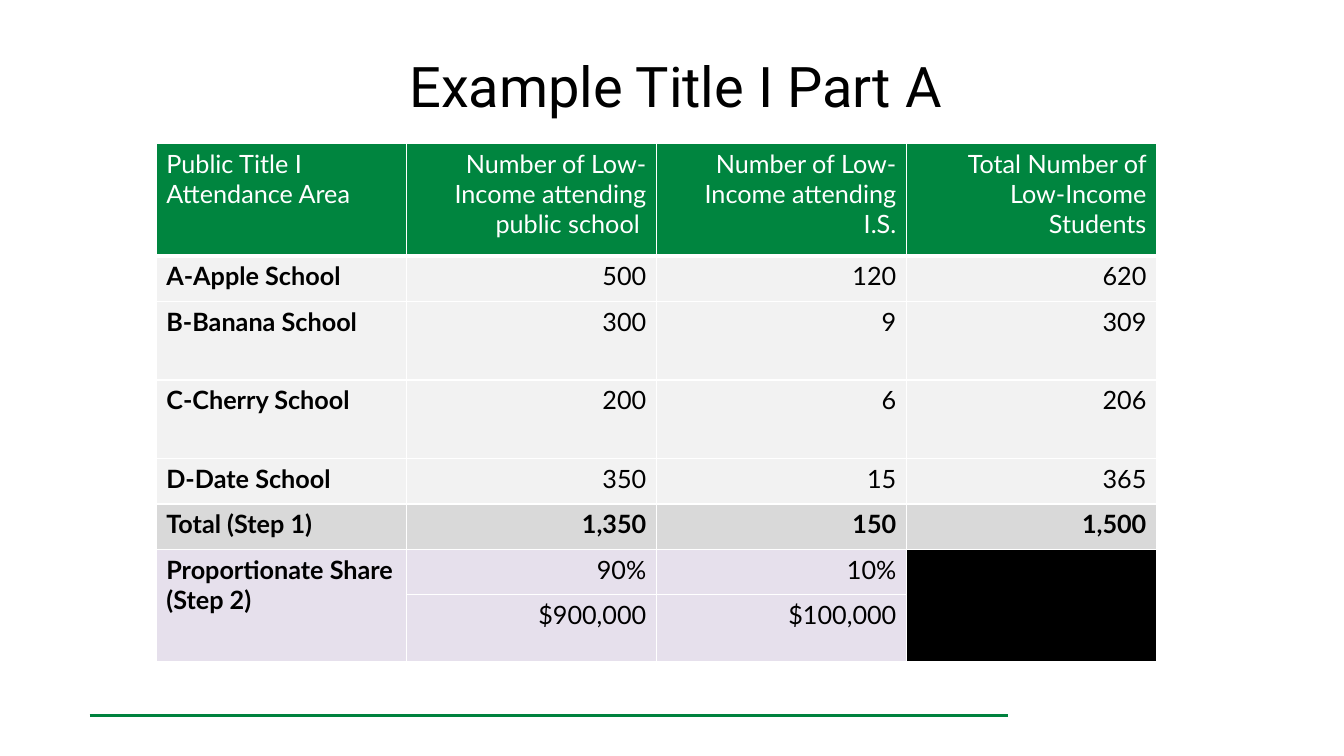
import pptx
import pptx.dml.color
import pptx.enum.shapes
import pptx.enum.text
import pptx.oxml
import pptx.oxml.ns
import pptx.util
from pptx.util import Inches

COLORS = {"rule": "00823E", "header": "00853F", "school": "F2F2F2", "total": "D9D9D9",
          "share": "E6E0EC", "black": "000000", "white": "FFFFFF"}
ROWS = [
    ("header", 1.12, ["Public Title I Attendance Area", "Number of Low-Income attending public school ",
                      "Number of Low-Income attending I.S.", "Total Number of Low-Income Students"]),
    ("school", 0.45, ["A-Apple School", "500", "120", "620"]),
    ("school", 0.78, ["B-Banana School", "300", "9", "309"]),
    ("school", 0.78, ["C-Cherry School", "200", "6", "206"]),
    ("school", 0.45, ["D-Date School", "350", "15", "365"]),
    ("total", 0.45, ["Total (Step 1)", "1,350", "150", "1,500"]),
    ("share", 0.45, ["Proportionate Share\n(Step 2)", "90%", "10%", ""]),
    ("share", 0.66, ["", "$900,000", "$100,000", ""]),
]
MERGES = [(6, 0, 7, 0), (6, 3, 7, 3)]
ALIGN = pptx.enum.text.PP_ALIGN


def rgb(name):
    return pptx.dml.color.RGBColor.from_string(COLORS[name])


class SlideBuilder:
    """Holds the style and the current slide, and adds each kind of element."""

    def __init__(self, page):
        self.page = page
        self.title_format = {"name": "Roboto", "size": pptx.util.Pt(40), "bold": False}
        self.cell_format = {"name": "Lato", "size": pptx.util.Pt(18)}

    def fill_text(self, para, text, align, color, values):
        para.text = text
        para.alignment = align
        for span in para.runs:
            for key, value in values.items():
                setattr(span.font, key, value)
            span.font.color.rgb = rgb(color)

    def title(self, text, left, top, width, height):
        box = self.page.shapes.title
        place = {"left": left, "top": top, "width": width, "height": height}
        for key, value in place.items():
            setattr(box, key, Inches(value))
        box.text_frame.vertical_anchor = pptx.enum.text.MSO_ANCHOR.MIDDLE
        self.fill_text(box.text_frame.paragraphs[0], text, ALIGN.CENTER, "black", self.title_format)

    def rule(self, left, right, top):
        line = self.page.shapes.add_connector(
            pptx.enum.shapes.MSO_CONNECTOR.STRAIGHT, Inches(left), Inches(top), Inches(right), Inches(top))
        line.line.color.rgb = rgb("rule")
        line.line.width = pptx.util.Pt(2.25)
        properties = line._element.spPr
        properties.append(pptx.oxml.parse_xml(f'<a:effectLst {pptx.oxml.ns.nsdecls("a")}/>'))

    def borders(self, cell, bottom):
        properties = cell._tc.get_or_add_tcPr()
        for side, points in {"L": 1, "R": 1, "T": 1, "B": bottom}.items():
            properties.append(pptx.oxml.parse_xml(
                f'<a:ln{side} {pptx.oxml.ns.nsdecls("a")} w="{pptx.util.Pt(points)}"><a:solidFill>'
                f'<a:srgbClr val="{COLORS["white"]}"/></a:solidFill></a:ln{side}>'))

    def table(self, rows, merges, left, top, column_width):
        count = len(rows[0][2])
        height = sum(row[1] for row in rows)
        grid = self.page.shapes.add_table(len(rows), count, Inches(left), Inches(top),
                                          Inches(column_width * count), Inches(height)).table
        for column in grid.columns:
            column.width = Inches(column_width)
        for index, (kind, row_height, texts) in enumerate(rows):
            grid.rows[index].height = Inches(row_height)
            for position, text in enumerate(texts):
                cell = grid.cell(index, position)
                is_header = kind == "header"
                self.borders(cell, 3 if is_header else 1)
                cell.fill.solid()
                cell.fill.fore_color.rgb = rgb("black" if kind == "share" and position == 3 else kind)
                bold = kind == "total" or (position == 0 and not is_header)
                self.fill_text(cell.text_frame.paragraphs[0], text, ALIGN.RIGHT if position else ALIGN.LEFT,
                               "white" if is_header else "black", {**self.cell_format, "bold": bold})
        for first_row, first_column, last_row, last_column in merges:
            grid.cell(first_row, first_column).merge(grid.cell(last_row, last_column))


def main():
    deck = pptx.Presentation()
    deck.slide_width, deck.slide_height = Inches(13.33), Inches(7.5)
    builder = SlideBuilder(deck.slides.add_slide(deck.slide_layouts[5]))
    builder.rule(0.89, 10, 7.1)
    builder.title("Example Title I Part A", 0.7, 0.22, 12, 1.25)
    builder.table(ROWS, MERGES, 1.55, 1.42, 2.48)
    deck.save("out.pptx")


if __name__ == "__main__":
    main()
